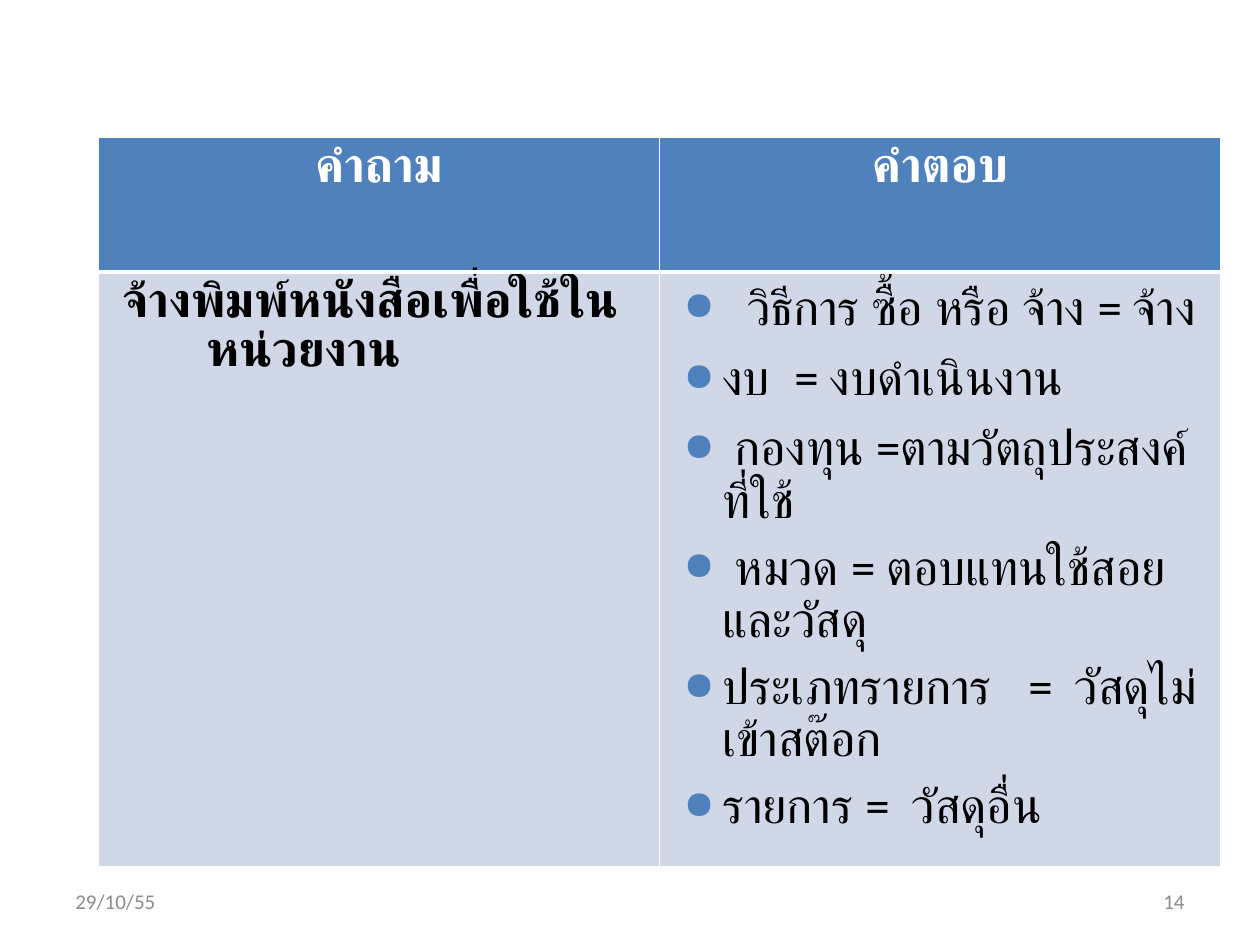
from lxml.etree import SubElement
from pptx import Presentation
from pptx.dml.color import RGBColor
from pptx.enum.text import MSO_ANCHOR, PP_ALIGN
from pptx.oxml.ns import qn
from pptx.util import Inches, Pt

WHITE = RGBColor(0xFF, 0xFF, 0xFF)
BLACK = RGBColor(0, 0, 0)
GRAY = RGBColor(0x8C, 0x8C, 0x8C)
BLUE = RGBColor(0x4F, 0x81, 0xBD)
PALE_BLUE = RGBColor(0xD0, 0xD8, 0xE8)

HEADERS = ["คำถาม", "คำตอบ"]
QUESTION = "จ้างพิมพ์หนังสือเพื่อใช้ในหน่วยงาน"
ANSWERS = [
    "  วิธีการ ซื้อ หรือ จ้าง = จ้าง",
    "งบ  = งบดำเนินงาน",
    " กองทุน =ตามวัตถุประสงค์ที่ใช้",
    " หมวด = ตอบแทนใช้สอยและวัสดุ",
    "ประเภทรายการ   =  วัสดุไม่เข้าสต๊อก",
    "รายการ =  วัสดุอื่น",
]


class SlideBuilder:
    font_name = "Calibri"
    table_size = 28
    footer_size = 12

    def __init__(self, presentation):
        self.width = presentation.slide_width
        self.height = presentation.slide_height
        self.slide = presentation.slides.add_slide(presentation.slide_layouts[6])

    def box(self, left, top, width, height):
        return (int(left * self.width), int(top * self.height),
                int(width * self.width), int(height * self.height))

    def style(self, paragraph, size, color, bold=False, alignment=PP_ALIGN.LEFT):
        paragraph.alignment = alignment
        font = paragraph.font
        font.name, font.size, font.bold = self.font_name, Pt(size), bold
        font.color.rgb = color

    def footer(self, text, left, alignment):
        shape = self.slide.shapes.add_textbox(*self.box(left, 0.927, 0.233, 0.053))
        frame = shape.text_frame
        frame.word_wrap = True
        frame.vertical_anchor = MSO_ANCHOR.MIDDLE
        frame.text = text
        self.style(frame.paragraphs[0], self.footer_size, GRAY, alignment=alignment)

    def table(self, left, top, width, row_shares):
        shape = self.slide.shapes.add_table(
            len(row_shares), len(HEADERS), *self.box(left, top, width, sum(row_shares)))
        table = shape.table
        table.horz_banding = False
        for row, share in zip(table.rows, row_shares):
            row.height = int(share * self.height)
        return table

    def borders(self, cell, **widths):
        properties = cell._tc.get_or_add_tcPr()
        for side in ("L", "R", "T", "B"):
            line = SubElement(properties, qn(f"a:ln{side}"), w=str(Pt(widths.get(side, 1))))
            fill = SubElement(line, qn("a:solidFill"))
            SubElement(fill, qn("a:srgbClr"), val=str(WHITE))

    def cell(self, cell, lines, fill, color, bold, alignment=PP_ALIGN.LEFT, **widths):
        self.borders(cell, **widths)
        cell.fill.solid()
        cell.fill.fore_color.rgb = fill
        cell.text = "\n".join(lines)
        for paragraph in cell.text_frame.paragraphs:
            self.style(paragraph, self.table_size, color, bold, alignment)
        return cell.text_frame.paragraphs

    def indent(self, paragraph, margin, hanging):
        properties = paragraph._p.get_or_add_pPr()
        properties.set("marL", str(Inches(margin)))
        properties.set("indent", str(-Inches(hanging)))
        return properties

    def bullet(self, paragraph):
        paragraph.space_before = Pt(6)
        properties = self.indent(paragraph, 0.4, 0.31)
        default_font = properties.find(qn("a:defRPr"))
        color = SubElement(properties, qn("a:buClr"))
        SubElement(color, qn("a:srgbClr"), val=str(BLUE))
        SubElement(properties, qn("a:buSzPct"), val="80000")
        SubElement(properties, qn("a:buChar"), char="●")
        if default_font is not None:
            properties.append(default_font)


def main():
    presentation = Presentation()
    presentation.slide_width, presentation.slide_height = Inches(10), Inches(7.5)
    builder = SlideBuilder(presentation)

    builder.footer("29/10/55", 0.05, PP_ALIGN.LEFT)
    builder.footer("14", 0.717, PP_ALIGN.RIGHT)

    table = builder.table(0.078, 0.145, 0.891, [0.143, 0.597])
    for column, header in enumerate(HEADERS):
        builder.cell(table.cell(0, column), [header], BLUE, WHITE, True, PP_ALIGN.CENTER, B=3)
    question = builder.cell(table.cell(1, 0), [QUESTION], PALE_BLUE, BLACK, True, T=3)
    builder.indent(question[0], 0.76, 0.67)
    for answer in builder.cell(table.cell(1, 1), ANSWERS, PALE_BLUE, BLACK, False, T=3):
        builder.bullet(answer)

    presentation.save("out.pptx")


if __name__ == "__main__":
    main()
